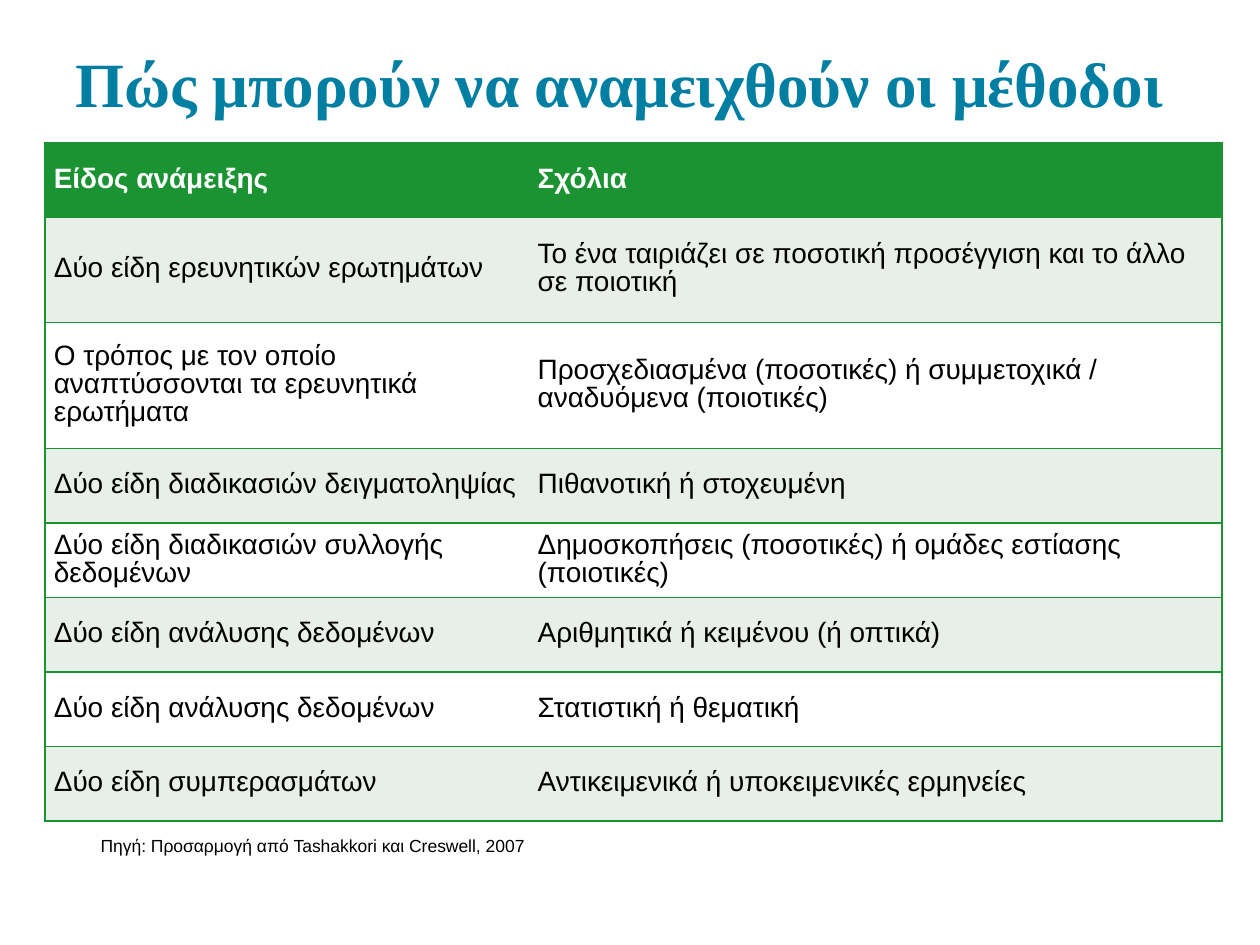
from lxml import etree
from pptx import Presentation
from pptx.dml.color import RGBColor
from pptx.enum.text import MSO_ANCHOR
from pptx.oxml.ns import qn
from pptx.util import Pt

TOP = MSO_ANCHOR.TOP
MID = MSO_ANCHOR.MIDDLE
LOW = MSO_ANCHOR.BOTTOM
GREEN = "1B9332"
PALE = "E8EEE8"
WHITE = "FFFFFF"
BLACK = "000000"


def write(para, text, name, size, color, bold):
    run = para.add_run()
    run.text = text
    look = {"name": name, "size": Pt(size), "bold": bold}
    for key, val in look.items():
        setattr(run.font, key, val)
    run.font.color.rgb = RGBColor.from_string(color)


def edge(cell, side, color):
    line = etree.SubElement(cell._tc.get_or_add_tcPr(), qn("a:ln" + side), w=str(Pt(1)))
    if color:
        fill = etree.SubElement(line, qn("a:solidFill"))
        etree.SubElement(fill, qn("a:srgbClr"), val=color)
    else:
        etree.SubElement(line, qn("a:noFill"))


deck = Presentation()
deck.slide_width = Pt(720)
deck.slide_height = Pt(540)
slide = deck.slides.add_slide(deck.slide_layouts[6])

texts = [
    ((36, 18, 648, 84), TOP, "Πώς μπορούν να αναμειχθούν οι μέθοδοι",
     "Times New Roman", 36, "007FA3", True),
    ((50.4, 470, 648, 25.2), LOW, "Πηγή: Προσαρμογή από Tashakkori και Creswell, 2007",
     "Arial", 10, BLACK, False),
]
for place, anchor, *style in texts:
    frame = slide.shapes.add_textbox(*map(Pt, place)).text_frame
    form = {"word_wrap": True, "vertical_anchor": anchor}
    form.update({"margin_" + side: Pt(7.2) for side in ("left", "top", "right", "bottom")})
    for key, val in form.items():
        setattr(frame, key, val)
    write(frame.paragraphs[0], *style)

rows = [
    ("Είδος ανάμειξης", "Σχόλια"),
    ("Δύο είδη ερευνητικών ερωτημάτων",
     "Το ένα ταιριάζει σε ποσοτική προσέγγιση και το άλλο σε ποιοτική"),
    ("Ο τρόπος με τον οποίο αναπτύσσονται τα ερευνητικά ερωτήματα",
     "Προσχεδιασμένα (ποσοτικές) ή συμμετοχικά / αναδυόμενα (ποιοτικές)"),
    ("Δύο είδη διαδικασιών δειγματοληψίας", "Πιθανοτική ή στοχευμένη"),
    ("Δύο είδη διαδικασιών συλλογής δεδομένων",
     "Δημοσκοπήσεις (ποσοτικές) ή ομάδες εστίασης (ποιοτικές)"),
    ("Δύο είδη ανάλυσης δεδομένων", "Αριθμητικά ή κειμένου (ή οπτικά)"),
    ("Δύο είδη ανάλυσης δεδομένων", "Στατιστική ή θεματική"),
    ("Δύο είδη συμπερασμάτων", "Αντικειμενικά ή υποκειμενικές ερμηνείες"),
]
wide = [276.5, 396]
tall = [42.6, 60, 72] + [42.6] * 5
table = slide.shapes.add_table(
    len(rows), len(wide), Pt(25.8), Pt(81.6), Pt(sum(wide)), Pt(sum(tall))).table
for col, width in zip(table.columns, wide):
    col.width = Pt(width)
for row, height in zip(table.rows, tall):
    row.height = Pt(height)

form = {"vertical_anchor": MID, "margin_left": Pt(5), "margin_right": Pt(5),
        "margin_top": 0, "margin_bottom": 0}
space = {"line_spacing": Pt(16), "space_after": Pt(6)}
for r, row in enumerate(rows):
    head = r == 0
    shade = GREEN if head else PALE if r % 2 else WHITE
    for c, text in enumerate(row):
        cell = table.cell(r, c)
        for key, val in form.items():
            setattr(cell, key, val)
        para = cell.text_frame.paragraphs[0]
        for key, val in space.items():
            setattr(para, key, val)
        write(para, text, "Arial", 16, WHITE if head else BLACK, head)
        for side in "LRTB":
            inner = side == "RL"[c]
            edge(cell, side, None if inner else GREEN)
        cell.fill.solid()
        cell.fill.fore_color.rgb = RGBColor.from_string(shade)

deck.save("out.pptx")
